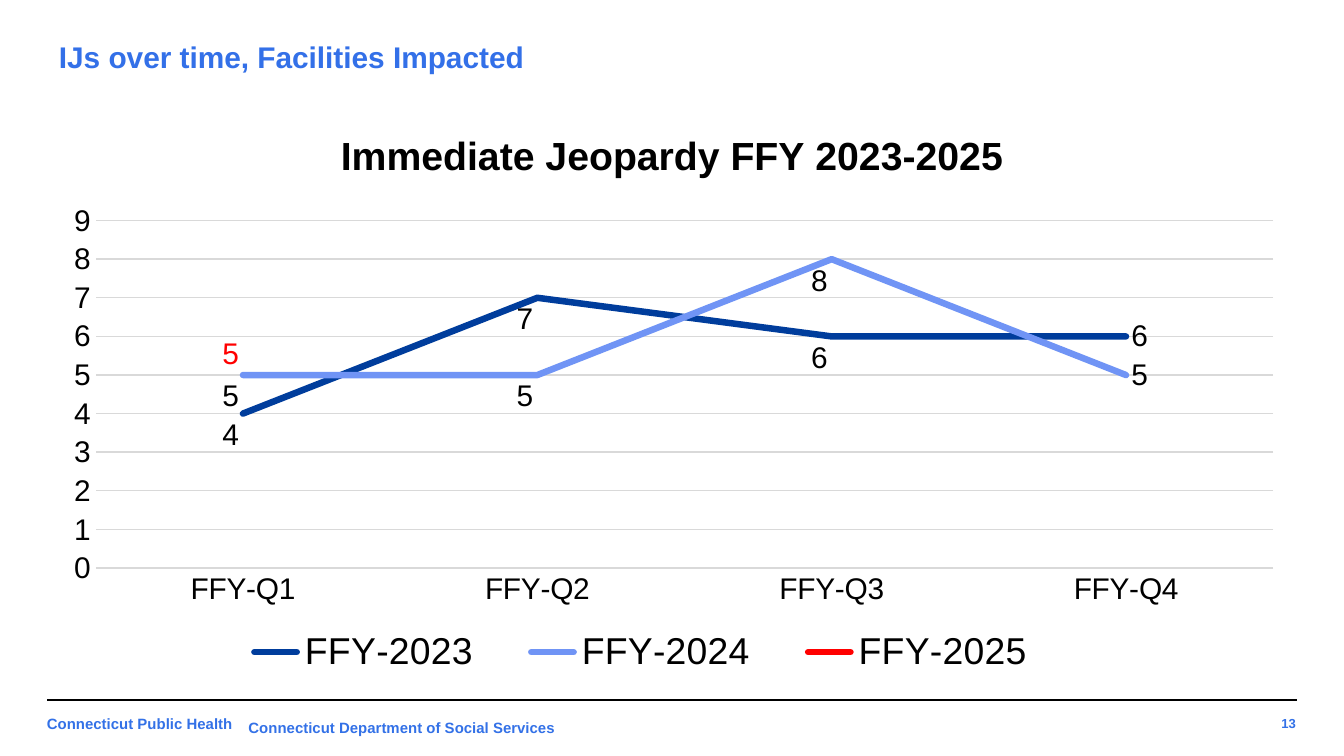
"""Build the slide on immediate jeopardy findings over time."""
from lxml import etree
from pptx import Presentation
from pptx.chart.data import CategoryChartData
from pptx.dml.color import RGBColor
from pptx.enum.chart import (
    XL_CHART_TYPE, XL_LABEL_POSITION, XL_LEGEND_POSITION, XL_MARKER_STYLE, XL_TICK_MARK)
from pptx.enum.shapes import MSO_CONNECTOR
from pptx.enum.text import MSO_ANCHOR, PP_ALIGN
from pptx.oxml.ns import qn
from pptx.util import Inches, Pt

LINE = XL_CHART_TYPE.LINE
STRAIGHT = MSO_CONNECTOR.STRAIGHT
ABOVE, BELOW, RIGHT = (
    XL_LABEL_POSITION.ABOVE, XL_LABEL_POSITION.BELOW, XL_LABEL_POSITION.RIGHT)
BOTTOM = XL_LEGEND_POSITION.BOTTOM
NO_MARKER = XL_MARKER_STYLE.NONE
NO_TICK = XL_TICK_MARK.NONE
TOP, MIDDLE = MSO_ANCHOR.TOP, MSO_ANCHOR.MIDDLE
ALIGN_LEFT, ALIGN_RIGHT = PP_ALIGN.LEFT, PP_ALIGN.RIGHT

FONT = "Arial"
BLACK, GRID, BLUE = "000000", "D9D9D9", "3371E7"
CHART_TITLE = "Immediate Jeopardy FFY 2023-2025"
QUARTERS = ["FFY-Q1", "FFY-Q2", "FFY-Q3", "FFY-Q4"]
SERIES = [
    ("FFY-2023", [4, 7, 6, 6], "003D9C", BLACK, BELOW),
    ("FFY-2024", [5, 5, 8, 5], "7094F5", BLACK, BELOW),
    ("FFY-2025", [5, None, None, None], "FF0000", "FF0000", ABOVE),
]
TEXTS = [
    ("IJs over time, Facilities Impacted", (0.34, 0.26, 9.32, 0.33), 16, "3370E8",
     ALIGN_LEFT, MIDDLE, 0.1, True),
    ("Connecticut Public Health", (0.25, 5.25, 3.28, 0.34), 8, BLUE,
     ALIGN_LEFT, TOP, 0.1, True),
    ("Connecticut Department of Social Services", (1.75, 5.3, 2.51, 0.24), 8, BLUE,
     ALIGN_LEFT, TOP, 0.05, False),
    ("13", (9.14, 5.26, 0.6, 0.25), 7, BLUE, ALIGN_RIGHT, MIDDLE, 0.1, True),
]
CHART_AREA = (0.34, 0.78, 9.32, 4.31)
PLOT_AREA = {"x": 0.04, "y": 0.2, "w": 0.94, "h": 0.6}
LEGEND_AREA = {"x": 0.13, "y": 0.9, "w": 0.69, "h": 0.09}
LABEL_SHIFT = {"x": -0.01, "y": 0}


def color(value):
    return RGBColor.from_string(value)


def style_font(font, size, value, bold=False):
    font.name, font.size, font.bold = FONT, Pt(size), bold
    font.color.rgb = color(value)


def add_text(page, text, area, size, value, align, anchor, inset, wrap):
    box = page.shapes.add_textbox(*map(Inches, area))
    frame = box.text_frame
    frame.text = text
    frame.word_wrap = wrap
    frame.vertical_anchor = anchor
    frame.margin_left = frame.margin_right = Inches(0.1)
    frame.margin_top = frame.margin_bottom = Inches(inset)
    para = frame.paragraphs[0]
    para.alignment = align
    style_font(para.runs[0].font, size, value, True)


def set_layout(parent, index, area, modes):
    for old in parent.findall(qn("c:layout")):
        parent.remove(old)
    layout = etree.Element(qn("c:layout"))
    manual = etree.SubElement(layout, qn("c:manualLayout"))
    for tag, value in {**modes, **area}.items():
        etree.SubElement(manual, qn(f"c:{tag}")).set("val", str(value))
    parent.insert(index, layout)


def style_series(series, values, line_color, label_color, position):
    series.smooth = False
    series.marker.style = NO_MARKER
    line = series.format.line
    line.width = Pt(3.5)
    line.color.rgb = color(line_color)
    series._element.find(qn("c:spPr")).find(qn("a:ln")).set("cap", "rnd")
    labels = series.data_labels
    labels.show_value = True
    labels.position = RIGHT
    style_font(labels.font, 16, label_color)
    for index, value in enumerate(values[:3]):
        if value is not None:
            label = series.points[index].data_label
            style_font(label.font, 16, label_color)
            label.position = position
    for label in labels._element.findall(qn("c:dLbl")):
        set_layout(label, 1, LABEL_SHIFT, {})


def add_line_chart(page):
    data = CategoryChartData()
    data.categories = QUARTERS
    for name, values, *_ in SERIES:
        data.add_series(name, values)
    chart = page.shapes.add_chart(LINE, *map(Inches, CHART_AREA), data).chart
    style_font(chart.font, 10, BLACK)
    chart.plots[0].vary_by_categories = False

    chart.has_title = True
    title = chart.chart_title
    title.include_in_layout = False
    title.text_frame.text = CHART_TITLE
    style_font(title.text_frame.paragraphs[0].runs[0].font, 21, BLACK, True)

    chart.has_legend = True
    legend = chart.legend
    legend.position = BOTTOM
    legend.include_in_layout = False
    style_font(legend.font, 20, BLACK)

    quarters, counts = chart.category_axis, chart.value_axis
    for axis in (quarters, counts):
        axis.major_tick_mark = axis.minor_tick_mark = NO_TICK
        style_font(axis.tick_labels.font, 16, BLACK)
    quarters.format.line.color.rgb = color(GRID)
    quarters.format.line.width = Pt(1)
    counts.minimum_scale, counts.maximum_scale, counts.major_unit = 0, 9, 1
    counts.format.line.fill.background()
    grid = counts.major_gridlines.format.line
    grid.color.rgb = color(GRID)
    grid.width = Pt(0.75)

    for series, (_, *details) in zip(chart.plots[0].series, SERIES):
        style_series(series, *details)
    edges = {"xMode": "edge", "yMode": "edge"}
    plot_area = chart._chartSpace.chart.plotArea
    set_layout(plot_area, 0, PLOT_AREA, {"layoutTarget": "inner", **edges})
    set_layout(legend._element, 1, LEGEND_AREA, edges)


def main():
    deck = Presentation()
    deck.slide_width = Inches(10)
    deck.slide_height = deck.slide_width * 9 // 16
    page = deck.slides.add_slide(deck.slide_layouts[6])
    rule = page.shapes.add_connector(
        STRAIGHT, Inches(9.65), Inches(5.21), Inches(0.35), Inches(5.21))
    rule.line.color.rgb = color(BLACK)
    rule.line.width = Pt(0.75)
    etree.SubElement(rule._element.spPr, qn("a:effectLst"))
    add_line_chart(page)
    for text in TEXTS:
        add_text(page, *text)
    deck.save("out.pptx")


if __name__ == "__main__":
    main()
